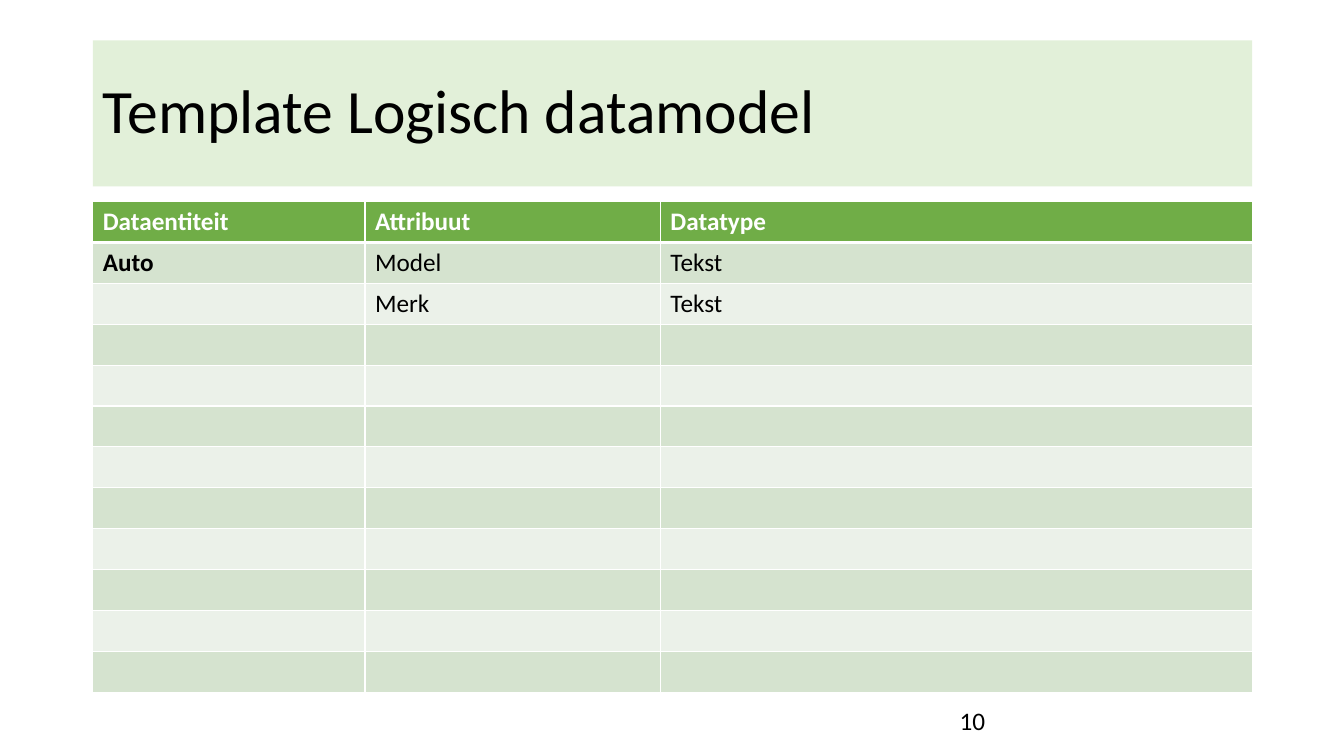
from lxml.etree import SubElement
from pptx import Presentation
from pptx.dml.color import RGBColor
from pptx.enum.text import MSO_ANCHOR, MSO_AUTO_SIZE, PP_ALIGN
from pptx.oxml.ns import qn
from pptx.util import Inches, Pt

COLORS = {
    "title_band": "E2F0D9",
    "header": "70AD47",
    "odd_row": "D5E3CF",
    "even_row": "EBF1E9",
    "white": "FFFFFF",
    "black": "000000",
}
FONT = "Calibri"
WIDTH, HEIGHT = Inches(13.33), Inches(7.5)
MARGIN, CONTENT_WIDTH = Inches(0.92), Inches(11.5)
COLUMN_WIDTHS = (2.7, 2.93, 5.87)
ROW_COUNT = 12
ENTRIES = [
    ("Dataentiteit", "Attribuut", "Datatype"),
    ("Auto", "Model", "Tekst"),
    ("", "Merk", "Tekst"),
]


def rgb(name):
    return RGBColor.from_string(COLORS[name])


def write(frame, text, size=18, color="black", bold=False, spacing=None):
    paragraph = frame.paragraphs[0]
    paragraph.alignment = PP_ALIGN.LEFT
    if spacing:
        paragraph.line_spacing = spacing
    run = paragraph.add_run()
    run.text = text
    run.font.name = FONT
    run.font.size = Pt(size)
    run.font.bold = bold
    run.font.color.rgb = rgb(color)


def add_title(slide, text):
    title = slide.shapes.title
    title.left, title.top = MARGIN, Inches(0.4)
    title.width, title.height = CONTENT_WIDTH, Inches(1.45)
    title.fill.solid()
    title.fill.fore_color.rgb = rgb("title_band")
    frame = title.text_frame
    frame.auto_size = MSO_AUTO_SIZE.NONE
    frame.vertical_anchor = MSO_ANCHOR.MIDDLE
    write(frame, text, size=44, spacing=0.9)


def set_borders(cell, top=1, bottom=1):
    properties = cell._tc.get_or_add_tcPr()
    for side, points in (("L", 1), ("R", 1), ("T", top), ("B", bottom)):
        line = SubElement(properties, qn(f"a:ln{side}"), w=str(Pt(points)))
        fill = SubElement(line, qn("a:solidFill"))
        SubElement(fill, qn("a:srgbClr"), val=COLORS["white"])


def add_data_model(slide):
    table = slide.shapes.add_table(
        ROW_COUNT, len(COLUMN_WIDTHS), MARGIN, Inches(2), CONTENT_WIDTH, Inches(4.87)
    ).table
    for column, width in zip(table.columns, COLUMN_WIDTHS):
        column.width = Inches(width)

    for r in range(ROW_COUNT):
        is_header = r == 0
        band = "header" if is_header else "odd_row" if r % 2 else "even_row"
        for c in range(len(COLUMN_WIDTHS)):
            cell = table.cell(r, c)
            # The header is set off by a thicker rule
            set_borders(cell, top=3 if r == 1 else 1, bottom=3 if is_header else 1)
            cell.fill.solid()
            cell.fill.fore_color.rgb = rgb(band)
            if r < len(ENTRIES) and ENTRIES[r][c]:
                write(cell.text_frame, ENTRIES[r][c],
                      color="white" if is_header else "black",
                      bold=is_header or c == 0)


def add_page_number(slide, number):
    box = slide.shapes.add_textbox(Inches(9.42), Inches(6.95), Inches(3), Inches(0.4))
    box.text_frame.word_wrap = True
    write(box.text_frame, number)


def main():
    presentation = Presentation()
    presentation.slide_width, presentation.slide_height = WIDTH, HEIGHT
    slide = presentation.slides.add_slide(presentation.slide_layouts[5])

    # Heading, table and page number
    add_title(slide, "Template Logisch datamodel")
    add_data_model(slide)
    add_page_number(slide, "10")

    presentation.save("out.pptx")


if __name__ == "__main__":
    main()
